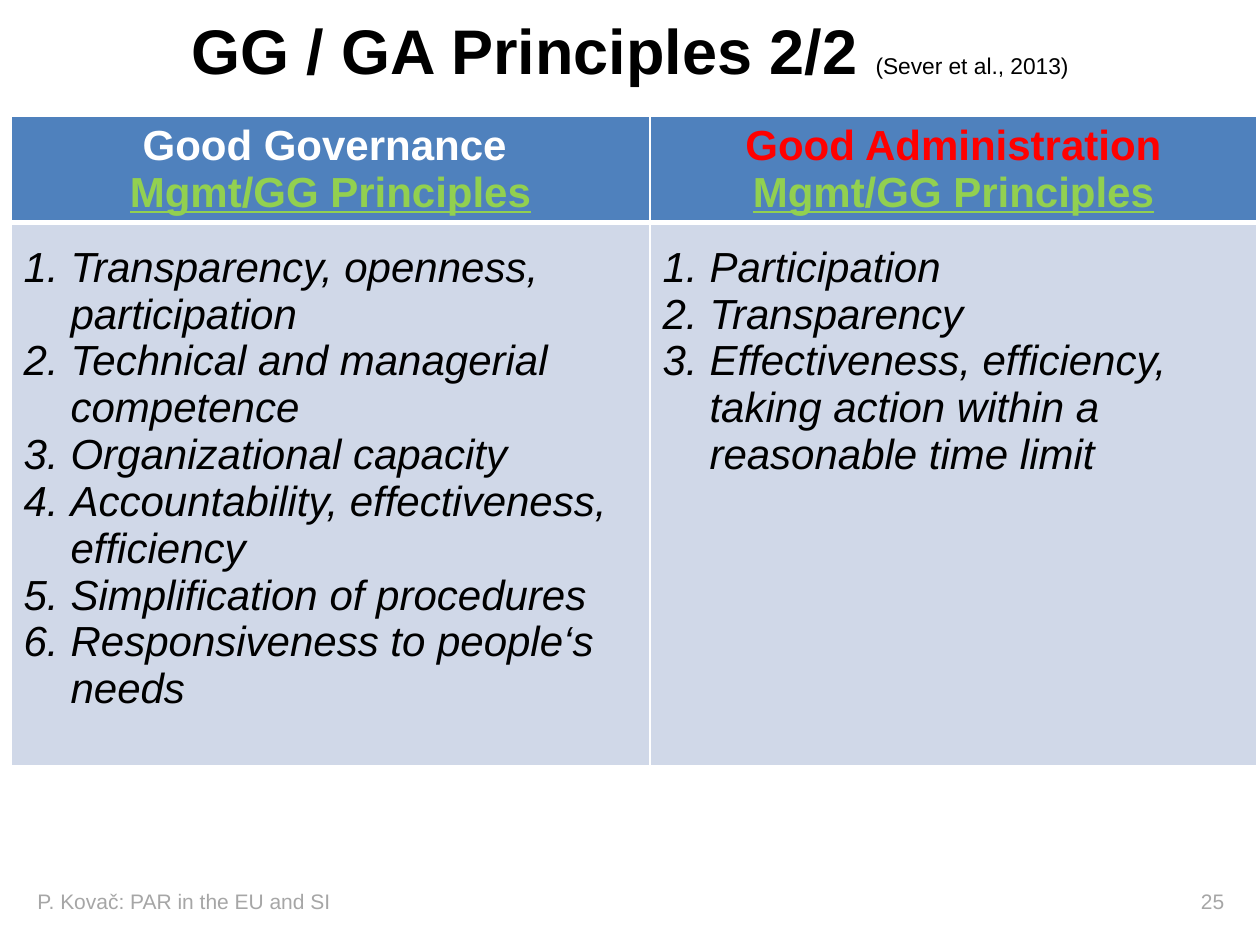
from typing import NamedTuple

from lxml import etree
from pptx import Presentation
from pptx import util as u
from pptx.dml.color import RGBColor
from pptx.enum import text
from pptx.oxml import ns

PX = 914400 / 126
FONT = "Arial"
BLACK = RGBColor(0, 0, 0)
WHITE = RGBColor(255, 255, 255)
RED = RGBColor(255, 0, 0)
GREEN = RGBColor(0x92, 0xD0, 0x50)
GREY = RGBColor(0xA6, 0xA6, 0xA6)
BLUE = RGBColor(0x4F, 0x81, 0xBD)
PALE = RGBColor(0xD0, 0xD8, 0xE8)


class Column(NamedTuple):
    head: str
    color: RGBColor
    width: int
    items: list[str]


COLUMNS = [
    Column("Good Governance ", WHITE, 639, [
        "Transparency, openness, participation",
        "Technical and managerial competence",
        "Organizational capacity",
        "Accountability, effectiveness, efficiency",
        "Simplification of procedures",
        "Responsiveness to people‘s needs",
    ]),
    Column("Good Administration", RED, 607, [
        "Participation",
        "Transparency",
        "Effectiveness, efficiency, taking action within a reasonable time limit",
    ]),
]
ROWS = (102, 543)


def px(n: int) -> int:
    return round(n * PX)


def place(shape, x: int, y: int, w: int, h: int) -> None:
    shape.left, shape.top, shape.width, shape.height = map(px, (x, y, w, h))


def add_run(para, words: str, size: int, color: RGBColor, bold=False,
            italic=False, under=False) -> None:
    run = para.add_run()
    run.text = words
    font = run.font
    font.name, font.size, font.color.rgb = FONT, u.Pt(size), color
    font.bold, font.italic, font.underline = bold, italic, under


def sub(node, tag: str, **attrs: str):
    return etree.SubElement(node, ns.qn(tag), attrs)


def add_para(frame, first: bool):
    return frame.paragraphs[0] if first else frame.add_paragraph()


def number(para) -> None:
    props = para._p.get_or_add_pPr()
    props.set("marL", str(px(47)))
    props.set("indent", str(-px(47)))
    sub(props, "a:buFont", typeface=FONT)
    sub(props, "a:buAutoNum", type="arabicPeriod")


def style(cell, fill: RGBColor, top: int, bottom: int) -> None:
    props = cell._tc.get_or_add_tcPr()
    for side, width in (("L", 1), ("R", 1), ("T", top), ("B", bottom)):
        line = sub(props, f"a:ln{side}", w=str(u.Pt(width)))
        sub(sub(line, "a:solidFill"), "a:srgbClr", val=str(WHITE))
    cell.fill.solid()
    cell.fill.fore_color.rgb = fill


def fill_head(cell, col: Column) -> None:
    style(cell, BLUE, 1, 3)
    lines = ((col.head, col.color, False), ("Mgmt/GG Principles", GREEN, True))
    for i, (words, color, under) in enumerate(lines):
        para = add_para(cell.text_frame, i == 0)
        para.alignment = text.PP_ALIGN.CENTER
        add_run(para, words, 24, color, bold=True, under=under)


def fill_body(cell, col: Column) -> None:
    style(cell, PALE, 3, 1)
    cell.margin_top = px(22)
    for i, item in enumerate(col.items):
        para = add_para(cell.text_frame, i == 0)
        number(para)
        add_run(para, item, 24, BLACK, italic=True)


def add_title(slide) -> None:
    title = slide.shapes.title
    place(title, 0, 0, 1260, 98)
    frame = title.text_frame
    frame.vertical_anchor = text.MSO_ANCHOR.MIDDLE
    para = frame.paragraphs[0]
    para.alignment = text.PP_ALIGN.CENTER
    add_run(para, "GG / GA Principles 2/2 ", 36, BLACK, bold=True)
    add_run(para, "(Sever et al., 2013)", 13, BLACK)


def add_grid(slide) -> None:
    width = sum(col.width for col in COLUMNS)
    grid = slide.shapes.add_table(
        len(ROWS), len(COLUMNS), px(11), px(116), px(width), px(sum(ROWS))).table
    grid.first_row = grid.horz_banding = False
    for row, high in zip(grid.rows, ROWS):
        row.height = px(high)
    for i, col in enumerate(COLUMNS):
        grid.columns[i].width = px(col.width)
        fill_head(grid.cell(0, i), col)
        fill_body(grid.cell(1, i), col)


def add_foot(slide) -> None:
    box = slide.shapes.add_textbox(px(25), px(876), px(1225), px(50))
    frame = box.text_frame
    frame.word_wrap = True
    frame.vertical_anchor = text.MSO_ANCHOR.MIDDLE
    para = frame.paragraphs[0]
    # Right tab stop for the page number
    tabs = sub(para._p.get_or_add_pPr(), "a:tabLst")
    sub(tabs, "a:tab", pos=str(px(1187)), algn="r")
    add_run(para, "P. Kovač: PAR in the EU and SI\t", 12, GREY)
    add_run(para, "25", 12, GREY)


def main() -> None:
    deck = Presentation()
    deck.slide_width, deck.slide_height = u.Inches(10), u.Inches(7.5)
    slide = deck.slides.add_slide(deck.slide_layouts[5])
    add_grid(slide)
    add_title(slide)
    add_foot(slide)
    deck.save("out.pptx")


if __name__ == "__main__":
    main()
